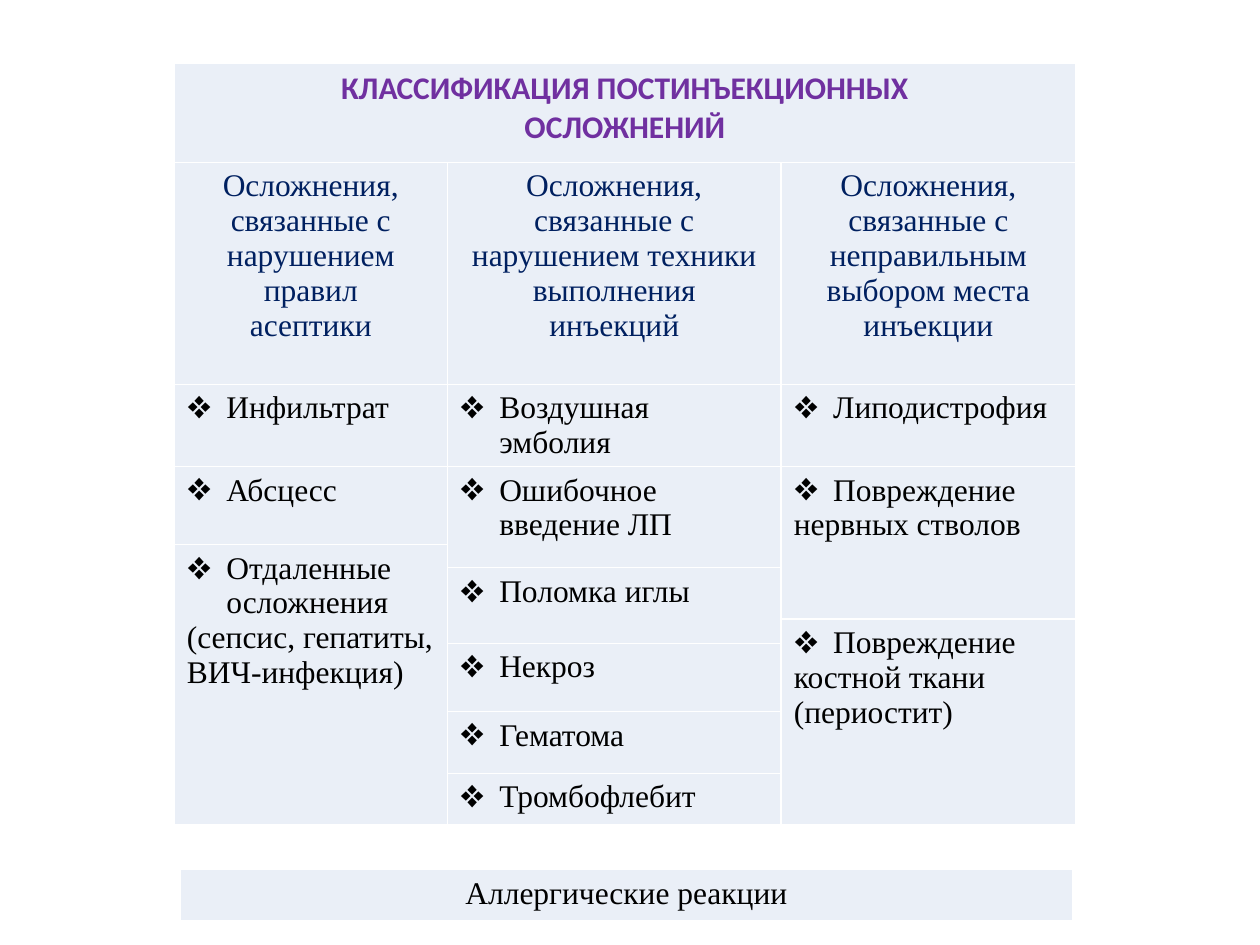
"""Build a slide with a table that classifies post-injection complications."""
from dataclasses import dataclass

from lxml.etree import SubElement
from pptx import Presentation
from pptx.dml.color import RGBColor as Color
from pptx.enum.text import PP_ALIGN as Align
from pptx.oxml.ns import qn
from pptx.util import Pt


@dataclass(frozen=True)
class Theme:
    cell: str = "EAEFF7"
    border: str = "FFFFFF"
    title: str = "7030A0"
    heading: str = "002060"
    text: str = "000000"
    title_font: str = "Calibri"
    text_font: str = "Times New Roman"
    size: int = 18
    indent: float = 22.5


THEME = Theme()


def write(cell, lines, color=THEME.text, font=THEME.text_font, bold=False,
          align=Align.LEFT, bullet=False):
    frame = cell.text_frame
    for index, line in enumerate(lines):
        para = frame.add_paragraph() if index else frame.paragraphs[0]
        para.alignment = align
        if bullet and index == 0:
            props = para._p.get_or_add_pPr()
            props.set("marL", str(Pt(THEME.indent)))
            props.set("indent", str(-Pt(THEME.indent)))
            SubElement(props, qn("a:buFont"), typeface="Wingdings")
            SubElement(props, qn("a:buChar"), char="❖")
            props[0].set("typeface", THEME.text_font)
        span = para.add_run()
        span.text = line
        span.font.size = Pt(THEME.size)
        span.font.name = font
        span.font.bold = bold
        span.font.color.rgb = Color.from_string(color)


def add_grid(page, left, top, widths, heights):
    frame = page.shapes.add_table(
        len(heights), len(widths), Pt(left), Pt(top),
        Pt(sum(widths)), Pt(sum(heights)))
    grid = frame.table
    grid.first_row = grid.horz_banding = False
    for column, width in zip(grid.columns, widths):
        column.width = Pt(width)
    for row, height in zip(grid.rows, heights):
        row.height = Pt(height)
    for cell in grid.iter_cells():
        props = cell._tc.get_or_add_tcPr()
        for side in ("lnL", "lnR", "lnT", "lnB"):
            line = SubElement(props, qn(f"a:{side}"), w=str(Pt(1)))
            fill = SubElement(line, qn("a:solidFill"))
            SubElement(fill, qn("a:srgbClr"), val=THEME.border)
        cell.fill.solid()
        cell.fill.fore_color.rgb = Color.from_string(THEME.cell)
    return grid


deck = Presentation()
deck.slide_width, deck.slide_height = Pt(720), Pt(540)
page = deck.slides.add_slide(deck.slide_layouts[6])

grid = add_grid(page, 99.6, 36.3, [156, 190.8, 168.2],
                [56.6, 126.7, 37, 44.6, 13.2, 29.3, 14, 39, 35.4, 29.2])
grid.cell(0, 0).merge(grid.cell(0, 2))
write(grid.cell(0, 0), ["КЛАССИФИКАЦИЯ ПОСТИНЪЕКЦИОННЫХ", "ОСЛОЖНЕНИЙ"],
      color=THEME.title, font=THEME.title_font, bold=True, align=Align.CENTER)

HEADINGS = [
    ["Осложнения,", "связанные с", "нарушением правил", "асептики"],
    ["Осложнения,", "связанные с", "нарушением техники", "выполнения", "инъекций"],
    ["Осложнения,", "связанные с неправильным", "выбором места", "инъекции"],
]
for column, lines in enumerate(HEADINGS):
    write(grid.cell(1, column), lines, color=THEME.heading, align=Align.CENTER)

COMPLICATIONS = [
    [(1, ["Инфильтрат"]), (1, ["Абсцесс"]),
     (6, ["Отдаленные осложнения", "(сепсис, гепатиты, ВИЧ-инфекция)"])],
    [(1, ["Воздушная эмболия"]), (2, ["Ошибочное введение ЛП"]),
     (2, ["Поломка иглы"]), (1, ["Некроз"]), (1, ["Гематома"]),
     (1, ["Тромбофлебит"])],
    [(1, ["Липодистрофия"]), (3, ["Повреждение", "нервных стволов"]),
     (4, ["Повреждение", "костной ткани (периостит)"])],
]
for column, entries in enumerate(COMPLICATIONS):
    row = 2
    for rows, lines in entries:
        cell = grid.cell(row, column)
        if rows > 1:
            cell.merge(grid.cell(row + rows - 1, column))
        write(cell, lines, bullet=True)
        row += rows

allergy = add_grid(page, 103, 497, [510], [29])
write(allergy.cell(0, 0), ["Аллергические реакции"], align=Align.CENTER)

deck.save("out.pptx")
